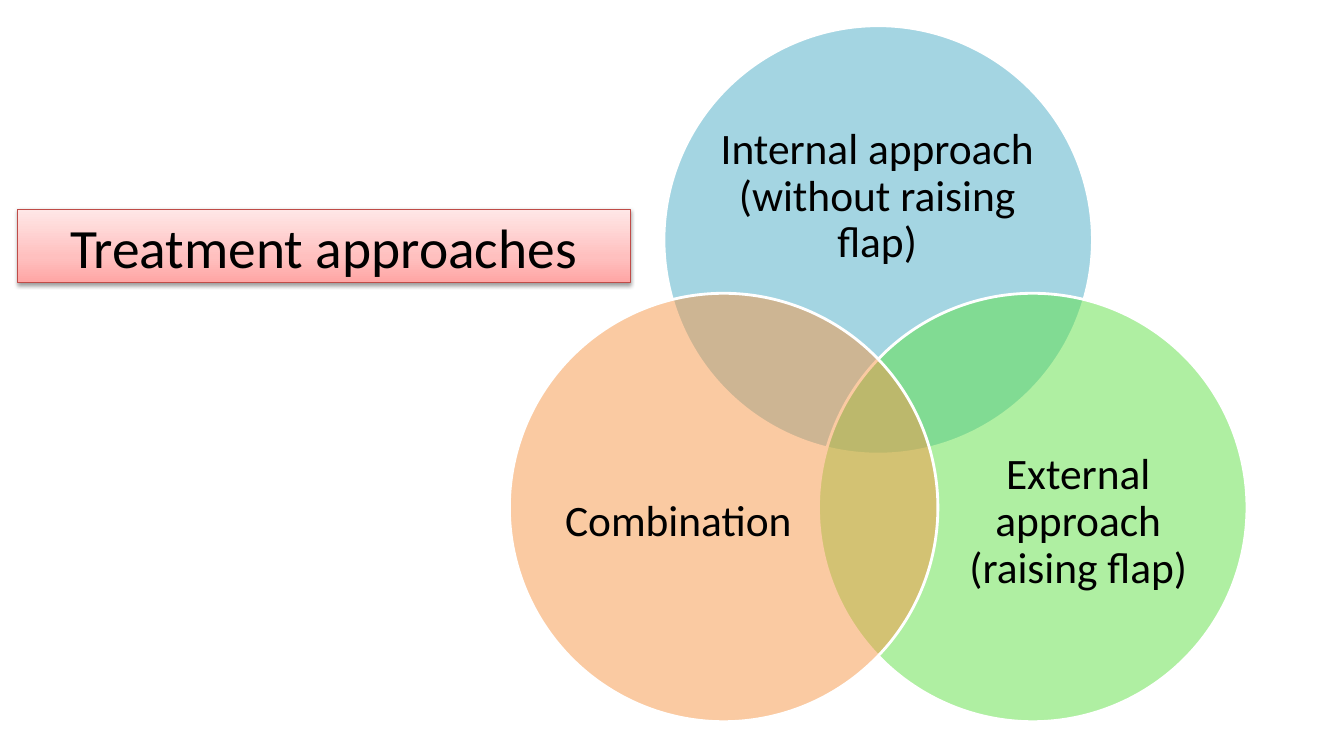
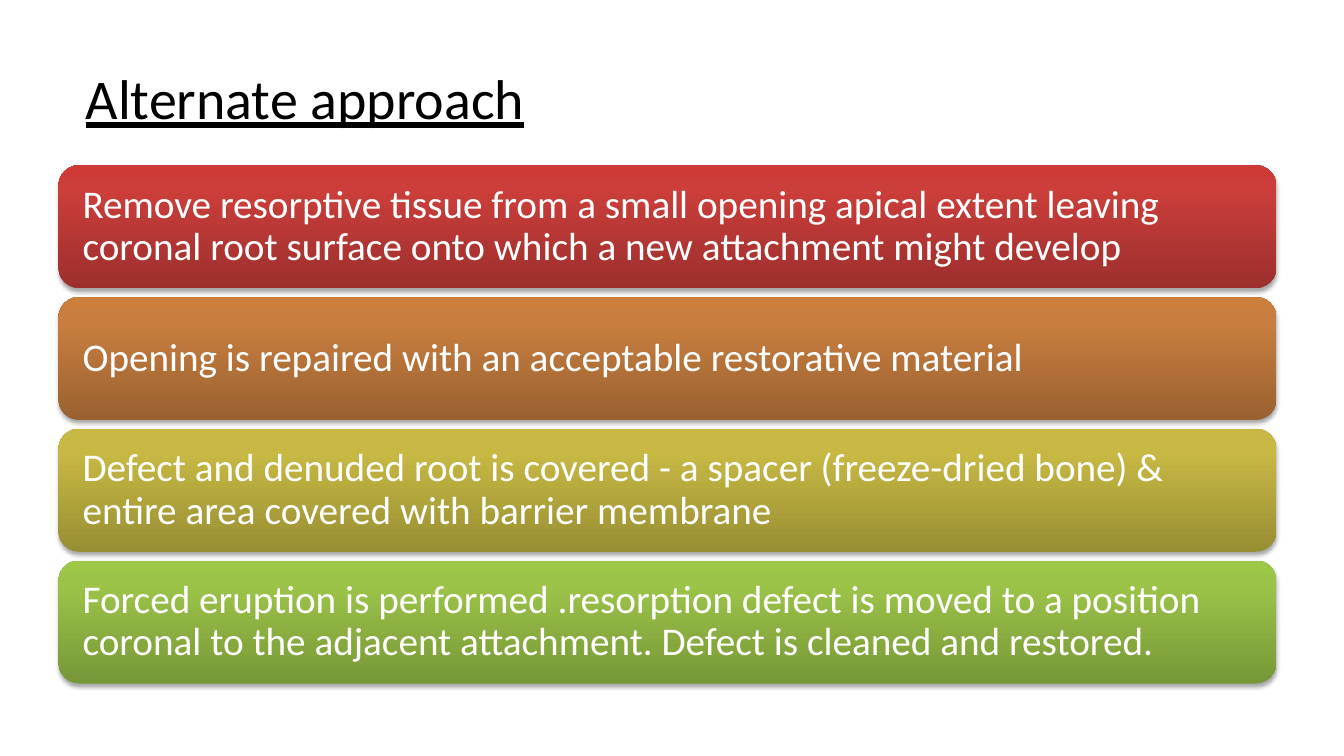
from math import cos, radians, sin

from lxml import etree
from pptx import Presentation
from pptx.dml.color import RGBColor
from pptx.enum.shapes import MSO_SHAPE
from pptx.enum.text import MSO_ANCHOR, MSO_AUTO_SIZE, PP_ALIGN
from pptx.oxml.ns import qn
from pptx.util import Inches, Pt

OVAL, ROUNDED = MSO_SHAPE.OVAL, MSO_SHAPE.ROUNDED_RECTANGLE
LEFT, CENTER = PP_ALIGN.LEFT, PP_ALIGN.CENTER
TOP, MIDDLE = MSO_ANCHOR.TOP, MSO_ANCHOR.MIDDLE
NO_FIT = MSO_AUTO_SIZE.NONE
FONT, BLACK, WHITE = "Calibri", "000000", "FFFFFF"

# Content: label, fill, angle around the centre, text area as shares of the circle
CIRCLES = [
    ("Internal approach (without raising flap)", "4BACC6", -90,
     (0.13, 0.175, 0.735, 0.45)),
    ("External approach (raising flap)", "60E146", 30, (0.306, 0.26, 0.6, 0.55)),
    ("Combination", "F79646", 150, (0.094, 0.26, 0.6, 0.55)),
]
# Content: step and its gradient colours from bottom to top
STEPS = [
    ("Remove resorptive tissue from a small opening apical extent leaving "
     "coronal root surface onto which a new attachment might develop",
     ("9C2F2D", "CB3E3A", "CE3B37")),
    ("Opening is repaired with an acceptable restorative material",
     ("9A6130", "C87E3F", "CC7E3C")),
    ("Defect and denuded root is covered - a spacer (freeze-dried bone) & "
     "entire area covered with barrier membrane",
     ("988E34", "C6B843", "C9BB41")),
    ("Forced eruption is performed .resorption defect is moved to a position "
     "coronal to the adjacent attachment. Defect is cleaned and restored.",
     ("779737", "9BC348", "9DC746")),
]
TITLE_GRADIENT = ("FFA6A5", "FFC0BF", "FFE7E7")

# Layout in inches
VENN_X, VENN_Y, VENN_RADIUS, DIAMETER = 8.71, 4.15, 1.77, 4.25
BAR_LEFT, BAR_TOP, BAR_WIDTH, BAR_HEIGHT, BAR_PITCH = 0.58, 1.64, 12.08, 1.22, 1.307


def color(value):
    return RGBColor.from_string(value)


def inches(values):
    return [Inches(value) for value in values]


def add_color(parent, value, alpha=None):
    node = etree.SubElement(parent, qn("a:srgbClr"), val=value)
    if alpha:
        etree.SubElement(node, qn("a:alpha"), val=str(alpha * 1000))


def fill_gradient(shape, colors, middle):
    """Three-stop gradient running from bottom to top."""
    shape.fill.gradient()
    shape.fill.gradient_angle = 90
    stops = shape._element.spPr.find(".//" + qn("a:gsLst"))
    for stop in list(stops):
        stops.remove(stop)
    for position, value in zip((0, middle, 100), colors):
        stop = etree.SubElement(stops, qn("a:gs"), pos=str(position * 1000))
        add_color(stop, value)


def cast_shadow(shape, distance, alpha):
    shape.shadow.inherit = False
    effects = shape._element.spPr.find(qn("a:effectLst"))
    shadow = etree.SubElement(
        effects, qn("a:outerShdw"), blurRad=str(Pt(3.1)), dist=str(Pt(distance)),
        dir="5400000", rotWithShape="0")
    add_color(shadow, BLACK, alpha)


def write(shape, text, size, ink=BLACK, align=LEFT, anchor=MIDDLE,
          inset=(0, 0), spacing=0.9, underline=None):
    frame = shape.text_frame
    frame.word_wrap, frame.auto_size = True, NO_FIT
    frame.vertical_anchor = anchor
    frame.margin_left = frame.margin_right = Inches(inset[0])
    frame.margin_top = frame.margin_bottom = Inches(inset[1])
    para = frame.paragraphs[0]
    para.alignment, para.line_spacing = align, spacing
    span = para.add_run()
    span.text = text
    span.font.name, span.font.size = FONT, Pt(size)
    span.font.color.rgb = color(ink)
    span.font.underline = underline


def add_page(deck, title, area, size, **style):
    page = deck.slides.add_slide(deck.slide_layouts.get_by_name("Title Only"))
    box = page.shapes.title
    box.left, box.top, box.width, box.height = inches(area)
    write(box, title, size, inset=(0.1, 0.05), spacing=1.0, **style)
    return page


def build_venn(deck):
    page = add_page(deck, "Treatment approaches", (0.17, 2.08, 6.08, 0.72), 39.6,
                    align=CENTER)
    title = page.shapes.title
    fill_gradient(title, TITLE_GRADIENT, 35)
    title.line.color.rgb, title.line.width = color("BF4C48"), Pt(0.75)
    cast_shadow(title, 1.6, 38)
    for label, fill, angle, (dx, dy, width, height) in CIRCLES:
        left = VENN_X + VENN_RADIUS * cos(radians(angle)) - DIAMETER / 2
        top = VENN_Y + VENN_RADIUS * sin(radians(angle)) - DIAMETER / 2
        circle = page.shapes.add_shape(OVAL, *inches((left, top, DIAMETER, DIAMETER)))
        circle.shadow.inherit = False
        circle.fill.solid()
        circle.fill.fore_color.rgb = color(fill)
        tint = circle._element.spPr.find(qn("a:solidFill"))[0]
        etree.SubElement(tint, qn("a:alpha"), val="50000")
        circle.line.color.rgb, circle.line.width = color(WHITE), Pt(2)
        box = page.shapes.add_textbox(*inches((
            left + dx * DIAMETER, top + dy * DIAMETER,
            width * DIAMETER, height * DIAMETER)))
        write(box, label, 31, align=CENTER)


def build_steps(deck):
    page = add_page(deck, "Alternate approach", (0.75, 0.58, 5, 0.77), 40,
                    anchor=TOP, underline=True)
    for row, (text, colors) in enumerate(STEPS):
        bar = page.shapes.add_shape(ROUNDED, *inches((
            BAR_LEFT, BAR_TOP + row * BAR_PITCH, BAR_WIDTH, BAR_HEIGHT)))
        fill_gradient(bar, colors, 80)
        bar.line.fill.background()
        cast_shadow(bar, 1.8, 35)
        write(bar, text, 28, ink=WHITE, inset=(0.18, 0.12))


def main():
    deck = Presentation()
    deck.slide_width, deck.slide_height = inches((13.33, 7.5))
    build_venn(deck)
    build_steps(deck)
    deck.save("out.pptx")


if __name__ == "__main__":
    main()
